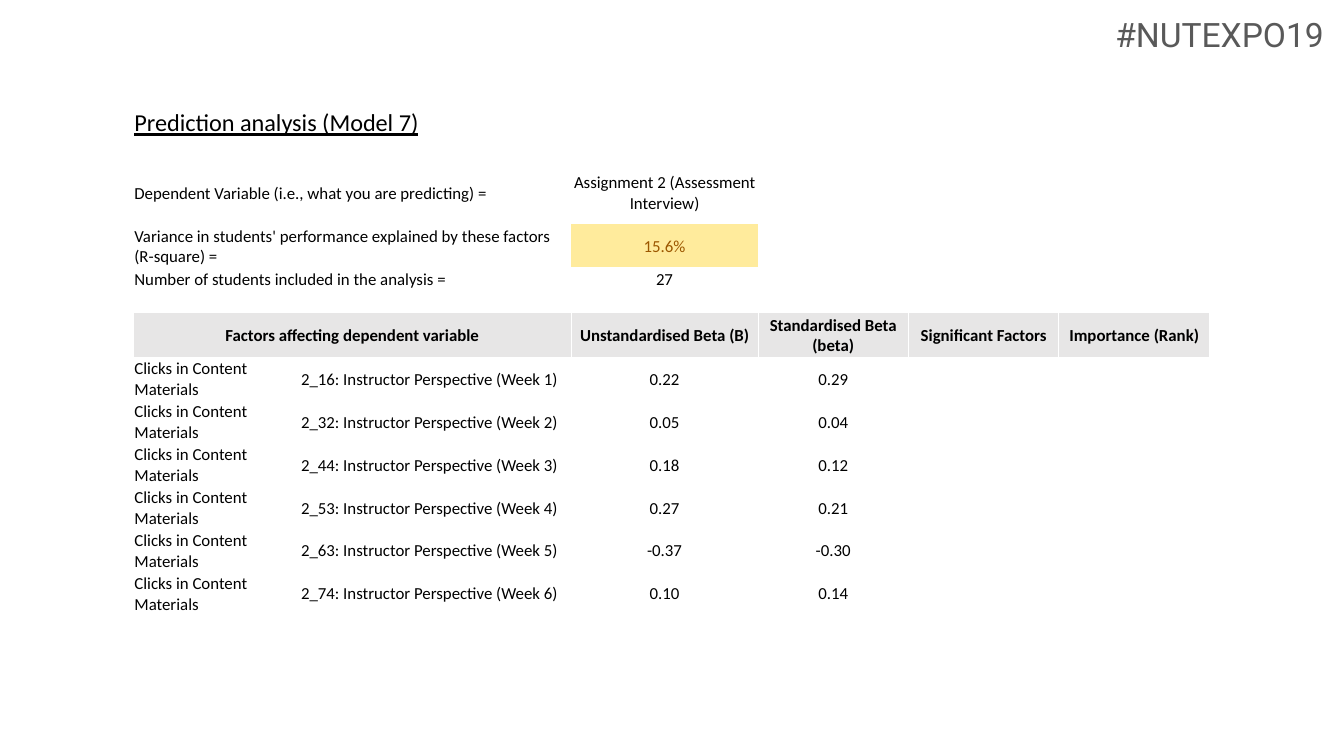
from lxml import etree
from pptx import Presentation
from pptx.dml.color import RGBColor
from pptx.enum.text import MSO_ANCHOR, PP_ALIGN
from pptx.oxml.ns import qn
from pptx.util import Inches, Pt

LEFT, CENTER = PP_ALIGN.LEFT, PP_ALIGN.CENTER
MIDDLE, BOTTOM = MSO_ANCHOR.MIDDLE, MSO_ANCHOR.BOTTOM
BLACK = RGBColor(0x00, 0x00, 0x00)
GRAY = RGBColor(0x59, 0x59, 0x59)
HEADER_FILL = RGBColor(0xE7, 0xE6, 0xE6)
HIGHLIGHT_FILL = RGBColor(0xFF, 0xEB, 0x9C)
HIGHLIGHT_TEXT = RGBColor(0x9C, 0x57, 0x00)
NO_STYLE = "{2D5ABB26-0587-4C30-8999-92F81FD0307C}"

COLUMN_WIDTHS = [1.24, 2.02, 1.39, 1.12, 1.12, 1.12]
ROW_HEIGHTS = [0.38, 0.17, 0.47, 0.32, 0.17, 0.17, 0.33] + [0.32] * 6 + [0.17]
TITLE_ROW, SUMMARY_ROW, HIGHLIGHT_ROW, HEADER_ROW = 0, 2, 3, 6

SUMMARY = [
    ("Dependent Variable (i.e., what you are predicting) =", "Assignment 2 (Assessment Interview)"),
    ("Variance in students' performance explained by these factors (R-square) =", "15.6%"),
    ("Number of students included in the analysis =", "27"),
]
HEADERS = [
    "Factors affecting dependent variable", "", "Unstandardised Beta (B)",
    "Standardised Beta (beta)", "Significant Factors", "Importance (Rank)",
]
FACTORS = [
    ("2_16", "0.22", "0.29"),
    ("2_32", "0.05", "0.04"),
    ("2_44", "0.18", "0.12"),
    ("2_53", "0.27", "0.21"),
    ("2_63", "-0.37", "-0.30"),
    ("2_74", "0.10", "0.14"),
]


def add_run(paragraph, text, size, font_name, color):
    run = paragraph.add_run()
    run.text = text
    run.font.size = Pt(size)
    run.font.name = font_name
    run.font.color.rgb = color
    return run


def add_white_borders(cell):
    properties = cell._tc.get_or_add_tcPr()
    for index, side in enumerate(("lnL", "lnR", "lnT", "lnB")):
        line = etree.Element(qn(f"a:{side}"), w=str(Pt(0.5)))
        fill = etree.SubElement(line, qn("a:solidFill"))
        etree.SubElement(fill, qn("a:srgbClr"), val="FFFFFF")
        properties.insert(index, line)


presentation = Presentation()
presentation.slide_width = Inches(10)
presentation.slide_height = presentation.slide_width * 9 // 16
slide = presentation.slides.add_slide(presentation.slide_layouts[6])

hashtag = slide.shapes.add_textbox(Inches(8.2), 0, Inches(1.83), Inches(0.48))
frame = hashtag.text_frame
frame.word_wrap = False
frame.margin_left = frame.margin_right = Inches(0.1)
frame.margin_top = frame.margin_bottom = Inches(0.1)
add_run(frame.paragraphs[0], "#NUTEXPO19", 18, "Roboto", GRAY)

texts = {(TITLE_ROW, 0): "Prediction analysis (Model 7)"}
for row, (label, value) in enumerate(SUMMARY, SUMMARY_ROW):
    texts[row, 0], texts[row, 2] = label, value
for column, header in enumerate(HEADERS):
    texts[HEADER_ROW, column] = header
for week, (code, unstandardised, standardised) in enumerate(FACTORS, 1):
    row = HEADER_ROW + week
    texts[row, 0] = "Clicks in Content Materials"
    texts[row, 1] = f"{code}: Instructor Perspective (Week {week})"
    texts[row, 2], texts[row, 3] = unstandardised, standardised

table_frame = slide.shapes.add_table(
    len(ROW_HEIGHTS), len(COLUMN_WIDTHS), Inches(0.99), Inches(0.65),
    Inches(sum(COLUMN_WIDTHS)), Inches(sum(ROW_HEIGHTS)))
table = table_frame.table
table.first_row = table.horz_banding = False
table._tbl.tblPr.find(qn("a:tableStyleId")).text = NO_STYLE
for column, width in enumerate(COLUMN_WIDTHS):
    table.columns[column].width = Inches(width)

for row, height in enumerate(ROW_HEIGHTS):
    table.rows[row].height = Inches(height)
    for column in range(len(COLUMN_WIDTHS)):
        cell = table.cell(row, column)
        cell.margin_left = cell.margin_right = cell.margin_top = Inches(0.01)
        cell.margin_bottom = 0
        cell.vertical_anchor = BOTTOM if row == TITLE_ROW else MIDDLE
        is_header = row == HEADER_ROW
        is_highlight = (row, column) == (HIGHLIGHT_ROW, 2)
        if is_header:
            add_white_borders(cell)
        if is_header or is_highlight:
            cell.fill.solid()
            cell.fill.fore_color.rgb = HEADER_FILL if is_header else HIGHLIGHT_FILL
        else:
            cell.fill.background()

        paragraph = cell.text_frame.paragraphs[0]
        paragraph.alignment = CENTER if is_header or column >= 2 else LEFT
        text = texts.get((row, column))
        if text:
            size = 13 if row == TITLE_ROW else 9
            color = HIGHLIGHT_TEXT if is_highlight else BLACK
            run = add_run(paragraph, text, size, "Calibri", color)
            run.font.bold = is_header
            run.font.underline = row == TITLE_ROW
        else:
            etree.SubElement(paragraph._p, qn("a:endParaRPr"), sz="900")

for row in (TITLE_ROW, *range(SUMMARY_ROW, SUMMARY_ROW + len(SUMMARY)), HEADER_ROW):
    table.cell(row, 0).merge(table.cell(row, 1))

presentation.save("out.pptx")
